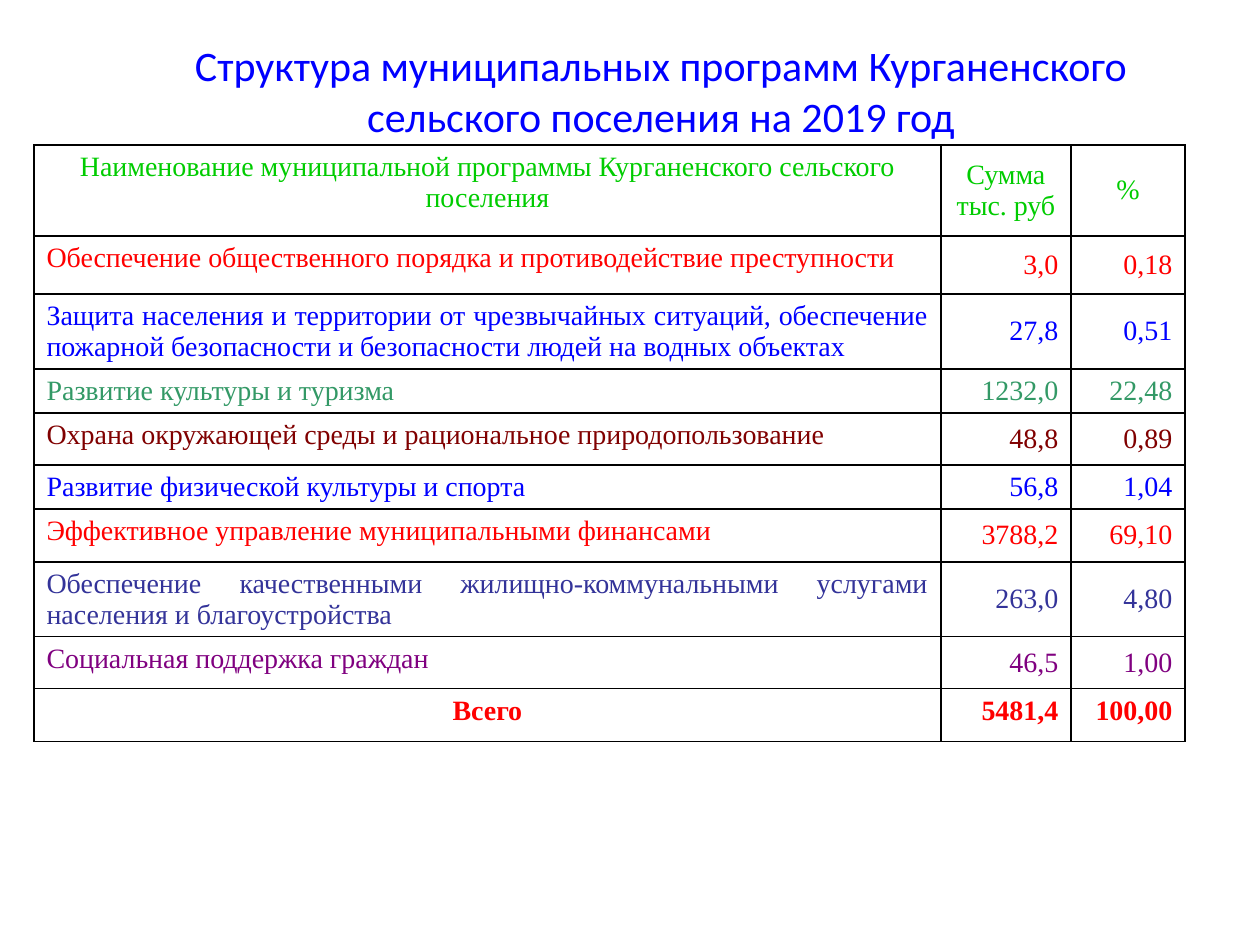
from lxml.etree import SubElement
from pptx import Presentation
from pptx.dml.color import RGBColor
from pptx.enum.text import MSO_ANCHOR, PP_ALIGN
from pptx.oxml.ns import qn
from pptx.util import Pt

PX = 914400 // 126  # EMU in one px

COLORS = {
    "green": "00CC00", "red": "FF0000", "blue": "0000FF", "teal": "339966",
    "maroon": "800000", "indigo": "333399", "purple": "800080", "border": "000000",
}
TITLE = "Структура муниципальных программ Курганенского сельского поселения на 2019 год"
HEADER = ("Наименование муниципальной программы Курганенского сельского поселения",
          "Сумма тыс. руб", "%")
TOTAL = ("Всего", "5481,4", "100,00")

# Name, sum, share, colour, row height
PROGRAMS = [
    ("Обеспечение общественного порядка и противодействие преступности",
     "3,0", "0,18", "red", 58),
    ("Защита населения и территории от чрезвычайных ситуаций, обеспечение "
     "пожарной безопасности и безопасности людей на водных объектах",
     "27,8", "0,51", "blue", 75),
    ("Развитие культуры и туризма", "1232,0", "22,48", "teal", 44),
    ("Охрана окружающей среды и рациональное природопользование",
     "48,8", "0,89", "maroon", 52),
    ("Развитие физической культуры и спорта", "56,8", "1,04", "blue", 44),
    ("Эффективное управление муниципальными финансами",
     "3788,2", "69,10", "red", 53),
    ("Обеспечение качественными жилищно-коммунальными услугами населения "
     "и благоустройства", "263,0", "4,80", "indigo", 75),
    ("Социальная поддержка граждан", "46,5", "1,00", "purple", 52),
]
HEADER_HEIGHT, TOTAL_HEIGHT = 91, 53
COLUMN_WIDTHS = (907, 130, 114)


def write(frame, text, align, color, **font_format):
    frame.text = text
    paragraph = frame.paragraphs[0]
    paragraph.alignment = align
    font = paragraph.runs[0].font
    for attribute, value in font_format.items():
        setattr(font, attribute, value)
    font.color.rgb = RGBColor.from_string(COLORS[color])


def draw_borders(cell):
    properties = cell._tc.get_or_add_tcPr()
    for position, side in enumerate(("a:lnL", "a:lnR", "a:lnT", "a:lnB")):
        border = properties.makeelement(qn(side), {"w": str(Pt(1))})
        fill = SubElement(border, qn("a:solidFill"))
        SubElement(fill, qn("a:srgbClr"), val=COLORS["border"])
        properties.insert(position, border)  # borders come before the fill


def add_title(slide, left, top, width, height):
    title = slide.shapes.title
    place = {"left": left, "top": top, "width": width, "height": height}
    for attribute, value in place.items():
        setattr(title, attribute, value * PX)
    title.text_frame.vertical_anchor = MSO_ANCHOR.MIDDLE
    write(title.text_frame, TITLE, PP_ALIGN.CENTER, "blue",
          name="Calibri", size=Pt(24))


def add_programs_table(slide, left, top):
    heights = [HEADER_HEIGHT, *(program[-1] for program in PROGRAMS), TOTAL_HEIGHT]
    table = slide.shapes.add_table(
        len(heights), len(COLUMN_WIDTHS), left * PX, top * PX,
        sum(COLUMN_WIDTHS) * PX, sum(heights) * PX).table
    for flag in ("first_row", "horz_banding"):
        setattr(table, flag, False)
    for column, width in zip(table.columns, COLUMN_WIDTHS):
        column.width = width * PX

    # Each line: texts, colour, alignment of name and figures, figure anchor, bold
    center, right, middle = PP_ALIGN.CENTER, PP_ALIGN.RIGHT, MSO_ANCHOR.MIDDLE
    lines = [(HEADER, "green", center, center, middle, False)]
    lines += [(program[:3], program[3], PP_ALIGN.JUSTIFY, right, middle, False)
              for program in PROGRAMS]
    lines.append((TOTAL, "red", center, right, MSO_ANCHOR.TOP, True))

    for row, height, line in zip(table.rows, heights, lines):
        row.height = height * PX
        texts, color, name_align, figure_align, figure_anchor, bold = line
        for index, (cell, text) in enumerate(zip(row.cells, texts)):
            cell.vertical_anchor = figure_anchor if index else MSO_ANCHOR.TOP
            cell.fill.background()
            write(cell.text_frame, text, figure_align if index else name_align,
                  color, name="Times New Roman", size=Pt(16), bold=bold)
            draw_borders(cell)


def main():
    presentation = Presentation()
    presentation.slide_width = 1260 * PX
    presentation.slide_height = 945 * PX
    slide = presentation.slides.add_slide(presentation.slide_layouts[5])
    add_title(slide, 126, 35, 1070, 110)
    add_programs_table(slide, 34, 145)
    presentation.save("out.pptx")


if __name__ == "__main__":
    main()
